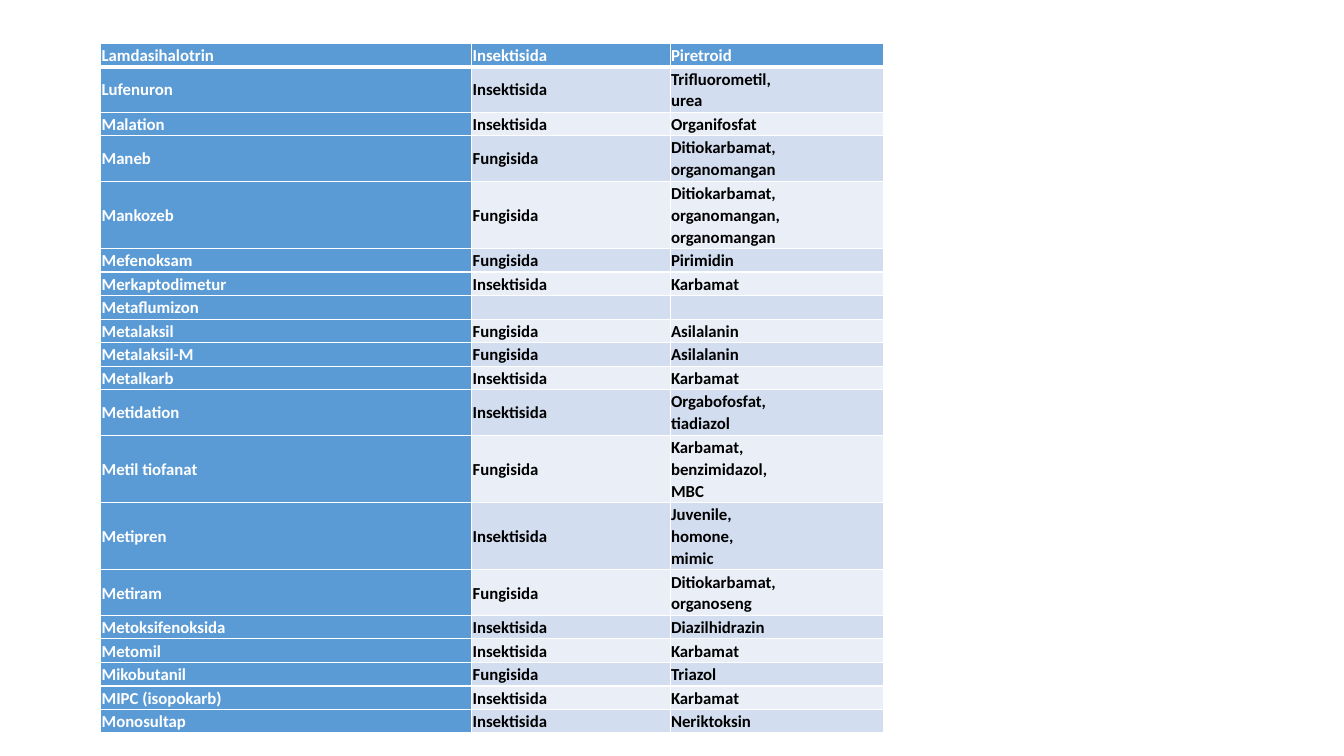
import pptx
import pptx.dml.color
import pptx.enum.text
import pptx.oxml
import pptx.oxml.ns
import pptx.util

Cm = pptx.util.Cm
BLUE, PALE, LIGHT = "5B9BD5", "D2DEEF", "EAEFF7"
WHITE, BLACK = "FFFFFF", "000000"
FUNGI, INSECT = "Fungisida", "Insektisida"
WIDTHS = (9.35, 5, 5.38)
ROWS = (
    ("Lamdasihalotrin", INSECT, "Piretroid"),
    ("Lufenuron", INSECT, "Trifluorometil,\nurea"),
    ("Malation", INSECT, "Organifosfat"),
    ("Maneb", FUNGI, "Ditiokarbamat,\norganomangan"),
    ("Mankozeb", FUNGI, "Ditiokarbamat,\norganomangan,\norganomangan"),
    ("Mefenoksam", FUNGI, "Pirimidin"),
    ("Merkaptodimetur", INSECT, "Karbamat"),
    ("Metaflumizon", "", ""),
    ("Metalaksil", FUNGI, "Asilalanin"),
    ("Metalaksil-M", FUNGI, "Asilalanin"),
    ("Metalkarb", INSECT, "Karbamat"),
    ("Metidation", INSECT, "Orgabofosfat,\ntiadiazol"),
    ("Metil tiofanat", FUNGI, "Karbamat,\nbenzimidazol,\nMBC"),
    ("Metipren", INSECT, "Juvenile,\nhomone,\nmimic"),
    ("Metiram", FUNGI, "Ditiokarbamat,\norganoseng"),
    ("Metoksifenoksida", INSECT, "Diazilhidrazin"),
    ("Metomil", INSECT, "Karbamat"),
    ("Mikobutanil", FUNGI, "Triazol"),
    ("MIPC (isopokarb)", INSECT, "Karbamat"),
    ("Monosultap", INSECT, "Neriktoksin"),
)


def color(code):
    """Turn a hex string into a colour."""
    return pptx.dml.color.RGBColor.from_string(code)


def edge(cell, side, width):
    """Draw one white border of a cell."""
    space = pptx.oxml.ns.nsdecls("a")
    cell._tc.get_or_add_tcPr().append(pptx.oxml.parse_xml(
        f'<a:ln{side} {space} w="{pptx.util.Pt(width)}"><a:solidFill>'
        f'<a:srgbClr val="{WHITE}"/></a:solidFill></a:ln{side}>'))


def write(cell, text, ink):
    """Put bold text in a cell."""
    cell.vertical_anchor = pptx.enum.text.MSO_ANCHOR.MIDDLE
    cell.margin_left = cell.margin_right = Cm(0.02)
    cell.margin_top = cell.margin_bottom = Cm(0.02)
    para = cell.text_frame.paragraphs[0]
    para.text = text
    para.line_spacing = 1.07
    font = para.font
    font.name, font.size, font.bold = "Calibri", pptx.util.Pt(12), True
    font.color.rgb = color(ink)
    if not text:
        space = pptx.oxml.ns.nsdecls("a")
        para._p.append(pptx.oxml.parse_xml(f'<a:endParaRPr {space} sz="1200"/>'))


def style(cell, row, col):
    """Set the borders and fill of a cell."""
    for side in "LRTB":
        thick = (row, side) in ((0, "B"), (1, "T"))
        edge(cell, side, 3 if thick else 1)
    cell.fill.solid()
    band = PALE if row % 2 else LIGHT
    cell.fill.fore_color.rgb = color(BLUE if row == 0 or col == 0 else band)


def grid(slide):
    """Add the pesticide table."""
    highs = [0.04 + 0.55 * (1 + row[2].count("\n")) for row in ROWS]
    table = slide.shapes.add_table(
        len(ROWS), len(WIDTHS), Cm(2.54), Cm(1.09),
        Cm(sum(WIDTHS)), Cm(sum(highs))).table
    table.first_row = table.horz_banding = False
    for col, width in enumerate(WIDTHS):
        table.columns[col].width = Cm(width)
    for row, (texts, high) in enumerate(zip(ROWS, highs)):
        table.rows[row].height = Cm(high)
        for col, text in enumerate(texts):
            cell = table.cell(row, col)
            write(cell, text, BLACK if row and col else WHITE)
            style(cell, row, col)


def main():
    """Build and save the slide."""
    deck = pptx.Presentation()
    deck.slide_width, deck.slide_height = Cm(33.87), Cm(19.05)
    grid(deck.slides.add_slide(deck.slide_layouts[6]))
    deck.save("out.pptx")


if __name__ == "__main__":
    main()
